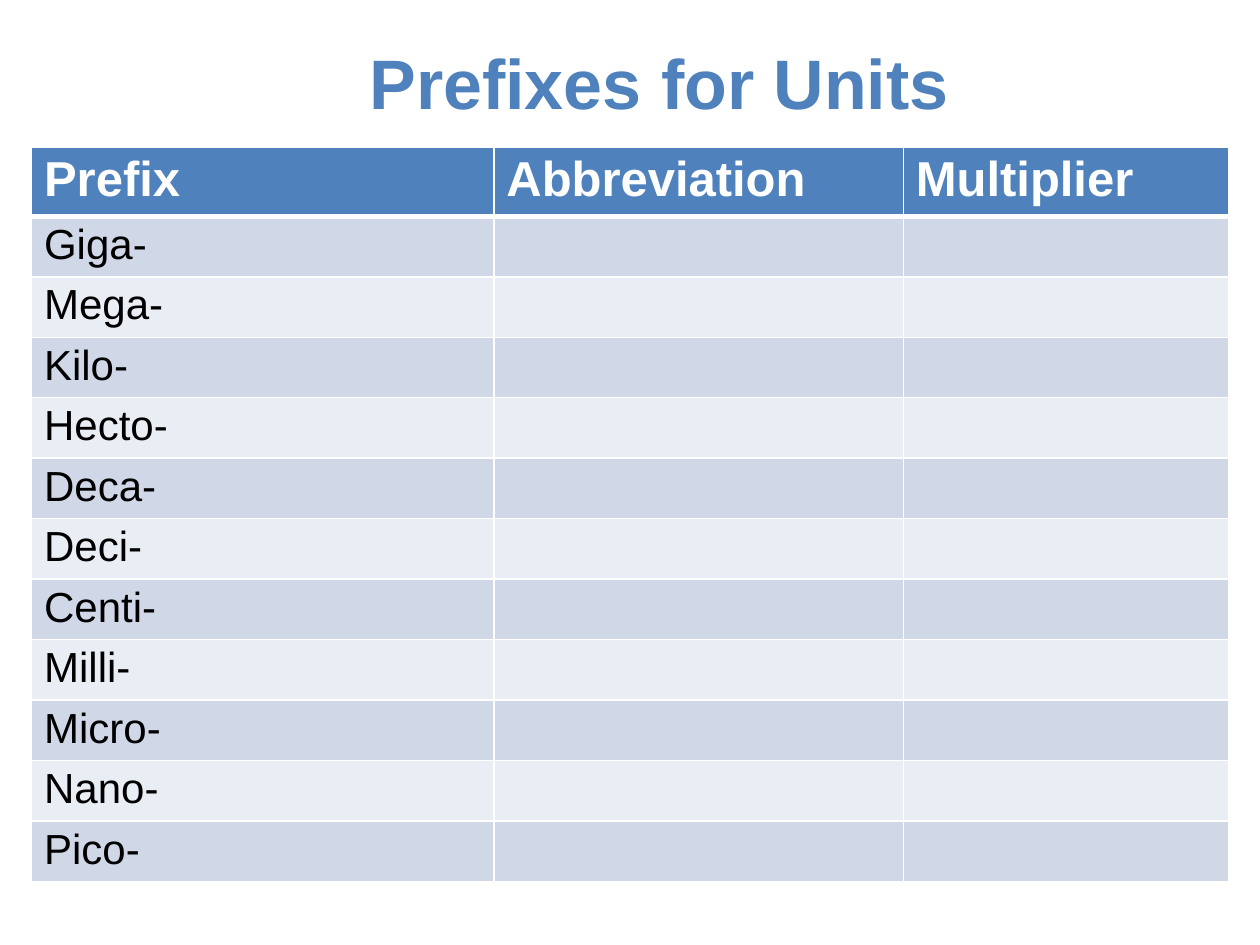
from dataclasses import dataclass

from lxml.etree import SubElement
from pptx import Presentation
from pptx.dml.color import RGBColor as Color
from pptx.enum.text import MSO_ANCHOR as Anchor, PP_ALIGN as Align
from pptx.oxml.ns import qn
from pptx.util import Inches, Pt


@dataclass(frozen=True)
class Theme:
    font: str = "Arial"
    accent: str = "4F81BD"
    white: str = "FFFFFF"
    black: str = "000000"
    bands: tuple = ("D0D8E8", "E9EDF4")
    title_size: int = 40
    header_size: int = 28
    body_size: int = 24


THEME = Theme()
HEADERS = ["Prefix", "Abbreviation", "Multiplier"]
PREFIXES = ["Giga-", "Mega-", "Kilo-", "Hecto-", "Deca-", "Deci-",
            "Centi-", "Milli-", "Micro-", "Nano-", "Pico-"]
COLUMN_WIDTHS = [3.67, 3.25, 2.58]
HEADER_HEIGHT, BODY_HEIGHT = 0.53, 0.47


def style_text(para, size, color, bold):
    for span in para.runs:
        span.font.name = THEME.font
        span.font.size = Pt(size)
        span.font.bold = bold
        span.font.color.rgb = Color.from_string(color)


def add_title(page, left, top, width, height):
    box = page.shapes.add_textbox(Inches(left), Inches(top), Inches(width), Inches(height))
    frame = box.text_frame
    frame.word_wrap = True
    frame.vertical_anchor = Anchor.MIDDLE
    frame.margin_left = Inches(0.56)  # moves the centred title to the right
    para = frame.paragraphs[0]
    para.text = "Prefixes for Units"
    para.alignment = Align.CENTER
    style_text(para, THEME.title_size, THEME.accent, True)


def set_borders(cell, bottom):
    """Draw white borders of 1 pt, with the given width at the bottom.

    Called before the fill is set, as the schema puts lines ahead of fills.
    """
    properties = cell._tc.get_or_add_tcPr()
    for side, width in (("L", 1), ("R", 1), ("T", 1), ("B", bottom)):
        line = SubElement(properties, qn(f"a:ln{side}"), w=str(Pt(width)))
        fill = SubElement(line, qn("a:solidFill"))
        SubElement(fill, qn("a:srgbClr"), val=THEME.white)


def fill_cell(cell, text, is_header, fill):
    cell.margin_top = cell.margin_bottom = Inches(0.04)
    set_borders(cell, 3 if is_header else 1)
    cell.fill.solid()
    cell.fill.fore_color.rgb = Color.from_string(fill)
    if text:
        cell.text_frame.text = text
        size = THEME.header_size if is_header else THEME.body_size
        color = THEME.white if is_header else THEME.black
        style_text(cell.text_frame.paragraphs[0], size, color, is_header)


def add_prefix_table(page, left, top):
    rows = [HEADERS] + [[prefix, "", ""] for prefix in PREFIXES]
    height = HEADER_HEIGHT + BODY_HEIGHT * len(PREFIXES)
    table = page.shapes.add_table(
        len(rows), len(HEADERS), Inches(left), Inches(top),
        Inches(sum(COLUMN_WIDTHS)), Inches(height)).table
    for column, width in zip(table.columns, COLUMN_WIDTHS):
        column.width = Inches(width)
    for index, texts in enumerate(rows):
        is_header = index == 0
        fill = THEME.accent if is_header else THEME.bands[(index - 1) % 2]
        row = table.rows[index]
        row.height = Inches(HEADER_HEIGHT if is_header else BODY_HEIGHT)
        for cell, text in zip(row.cells, texts):
            fill_cell(cell, text, is_header, fill)


def main():
    deck = Presentation()
    deck.slide_width, deck.slide_height = Inches(10), Inches(7.5)
    page = deck.slides.add_slide(deck.slide_layouts[6])
    add_title(page, 0, 0.33, 10, 0.63)
    add_prefix_table(page, 0.25, 1.17)
    deck.save("out.pptx")


if __name__ == "__main__":
    main()
